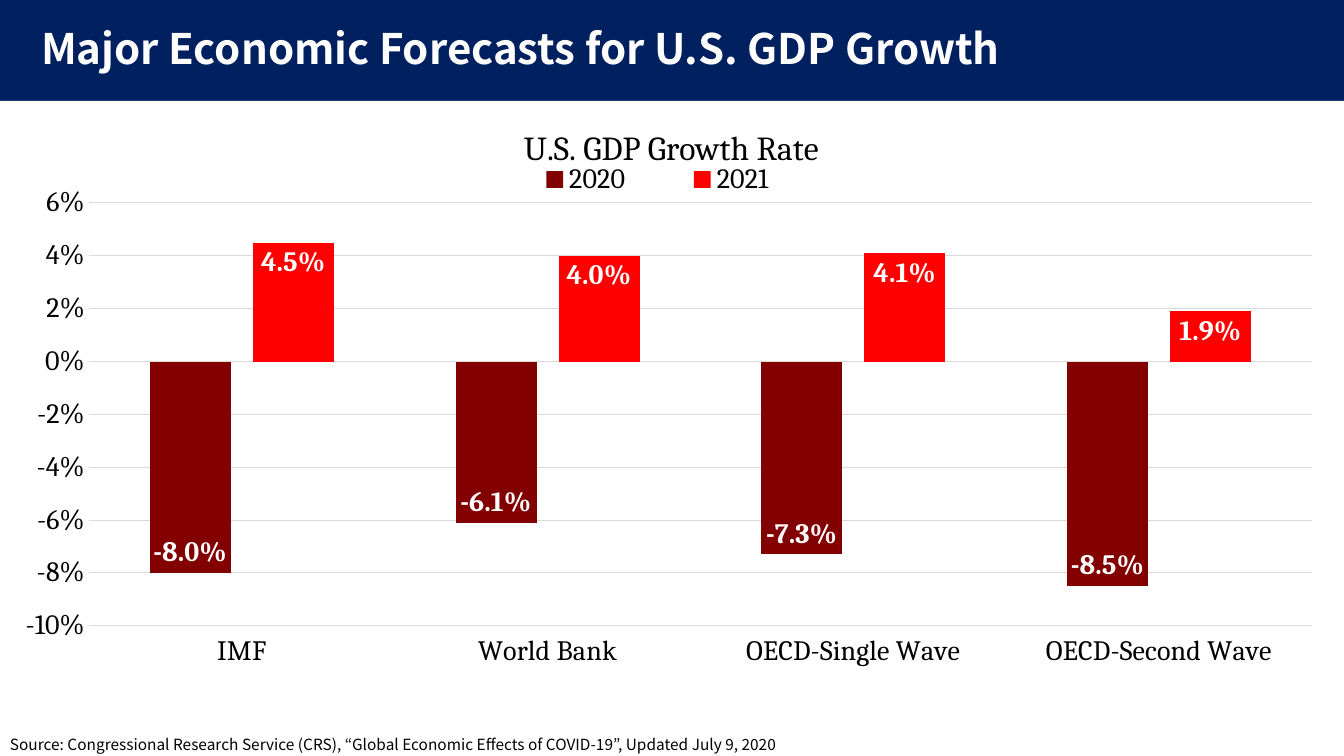
from pptx import Presentation
from pptx.chart.data import CategoryChartData
from pptx.dml.color import RGBColor
from pptx.enum.chart import (XL_CHART_TYPE, XL_LABEL_POSITION, XL_LEGEND_POSITION,
                             XL_TICK_LABEL_POSITION, XL_TICK_MARK)
from pptx.enum.shapes import MSO_SHAPE
from pptx.enum.text import MSO_ANCHOR, MSO_AUTO_SIZE, PP_ALIGN
from pptx.oxml import parse_xml
from pptx.oxml.ns import nsdecls
from pptx.util import Pt

COLUMNS = XL_CHART_TYPE.COLUMN_CLUSTERED
INSIDE_END = XL_LABEL_POSITION.INSIDE_END
LEGEND_TOP = XL_LEGEND_POSITION.TOP
LABELS_LOW = XL_TICK_LABEL_POSITION.LOW
NO_TICK = XL_TICK_MARK.NONE
RECTANGLE = MSO_SHAPE.RECTANGLE
MIDDLE, TOP = MSO_ANCHOR.MIDDLE, MSO_ANCHOR.TOP
LEFT = PP_ALIGN.LEFT
NO_AUTOFIT = MSO_AUTO_SIZE.NONE

EMU_PER_PX = 914400 / 100.8
CHART_WIDTH, CHART_HEIGHT = 1331, 575
THEME = {
    "navy": RGBColor.from_string("002060"),
    "white": RGBColor.from_string("FFFFFF"),
    "black": RGBColor.from_string("000000"),
    "grid": RGBColor.from_string("D9D9D9"),
    "2020": RGBColor.from_string("830000"),
    "2021": RGBColor.from_string("FF0000"),
    "text_font": "Noto Sans CJK JP",
    "chart_font": "Cambria",
    "title_size": 30,
    "chart_title_size": 24,
    "chart_size": 20,
    "source_size": 11,
}
FORECASTERS = ["IMF", "World Bank", "OECD-Single Wave", "OECD-Second Wave"]
GROWTH = {
    "2020": [-0.08, -0.061, -0.073, -0.085],
    "2021": [0.045, 0.04, 0.041, 0.019],
}


def px(*lengths):
    return [round(length * EMU_PER_PX) for length in lengths]


def write(frame, text, *, font, size, color, bold=False, anchor=None, spacing=None):
    if anchor is not None:
        frame.word_wrap = True
        frame.auto_size = NO_AUTOFIT
        frame.vertical_anchor = anchor
    paragraph = frame.paragraphs[0]
    paragraph.alignment = LEFT if anchor is not None else None
    paragraph.line_spacing = spacing
    run = paragraph.add_run()
    run.text = text
    run.font.name = font
    run.font.size = Pt(size)
    run.font.bold = bold
    run.font.color.rgb = color


deck = Presentation()
deck.slide_width, deck.slide_height = px(1344, 756)
slide = deck.slides.add_slide(deck.slide_layouts[5])
slide.background.fill.solid()
slide.background.fill.fore_color.rgb = THEME["navy"]

headline = slide.shapes.title
headline.left, headline.top, headline.width, headline.height = px(31, 5, 1159, 91)
write(headline.text_frame, "Major Economic Forecasts for U.S. GDP Growth",
      font=THEME["text_font"], size=THEME["title_size"], color=THEME["white"],
      bold=True, anchor=MIDDLE, spacing=0.9)

panel = slide.shapes.add_shape(RECTANGLE, *px(0, 101, 1344, 655))
panel.shadow.inherit = False
panel.fill.solid()
panel.fill.fore_color.rgb = THEME["white"]
panel.line.fill.background()

source = slide.shapes.add_textbox(*px(0, 732, 1102, 29))
write(source.text_frame,
      "Source: Congressional Research Service (CRS), “Global Economic Effects of COVID-19”, "
      "Updated July 9, 2020",
      font=THEME["text_font"], size=THEME["source_size"], color=THEME["black"],
      anchor=TOP, spacing=0.9)

growth_data = CategoryChartData(number_format="0.0%")
growth_data.categories = FORECASTERS
for year, rates in GROWTH.items():
    growth_data.add_series(year, rates)
chart = slide.shapes.add_chart(COLUMNS, *px(6, 107, CHART_WIDTH, CHART_HEIGHT),
                               growth_data).chart
chart.font.name = THEME["chart_font"]
chart.font.size = Pt(THEME["chart_size"])
chart.font.color.rgb = THEME["black"]

chart.has_title = True
write(chart.chart_title.text_frame, "U.S. GDP Growth Rate", font=THEME["chart_font"],
      size=THEME["chart_title_size"], color=THEME["black"])
chart.chart_title.include_in_layout = False
chart.has_legend = True
chart.legend.position = LEGEND_TOP
chart.legend.include_in_layout = False

bars = chart.plots[0]
bars.gap_width = 150
bars.overlap = -27
bars.vary_by_categories = False
for series in bars.series:
    series.format.fill.solid()
    series.format.fill.fore_color.rgb = THEME[series.name]
    series.invert_if_negative = False
    labels = series.data_labels
    labels.show_value = True
    labels.position = INSIDE_END
    labels.number_format = "0.0%"
    labels.number_format_is_linked = False
    labels.font.name = THEME["chart_font"]
    labels.font.size = Pt(THEME["chart_size"])
    labels.font.bold = True
    labels.font.color.rgb = THEME["white"]

forecaster_axis, rate_axis = chart.category_axis, chart.value_axis
for axis in (forecaster_axis, rate_axis):
    axis.major_tick_mark = axis.minor_tick_mark = NO_TICK
forecaster_axis.tick_label_position = LABELS_LOW
rate_axis.minimum_scale, rate_axis.maximum_scale, rate_axis.major_unit = -0.1, 0.06, 0.02
rate_axis.tick_labels.number_format = "0%"
rate_axis.tick_labels.number_format_is_linked = False
rate_axis.format.line.fill.background()
for rule in (forecaster_axis.format.line, rate_axis.major_gridlines.format.line):
    rule.color.rgb = THEME["grid"]
    rule.width = Pt(0.75)

plot_area = chart._chartSpace.chart.plotArea
LAYOUTS = [
    (plot_area, None, {"x": 83, "y": 96, "w": 1223, "h": 423}),
    (chart.chart_title._element, "c:tx", {"x": 512, "y": 13}),
    (chart.legend._element, "c:legendPos", {"x": 481, "y": 55, "w": 341, "h": 35}),
]
for part, predecessor, place in LAYOUTS:
    target = '<c:layoutTarget val="inner"/>' if part is plot_area else ""
    modes = "".join(f'<c:{side}Mode val="edge"/>' for side in "xy")
    sizes = "".join(
        f'<c:{side} val="{length / (CHART_WIDTH if side in "xw" else CHART_HEIGHT)}"/>'
        for side, length in place.items())
    layout = parse_xml(f'<c:layout {nsdecls("c")}><c:manualLayout>{target}{modes}{sizes}'
                       "</c:manualLayout></c:layout>")
    for old_layout in part.xpath("c:layout"):
        part.remove(old_layout)
    if predecessor:
        part.xpath(predecessor)[0].addnext(layout)
    else:
        part.insert(0, layout)

deck.save("out.pptx")
